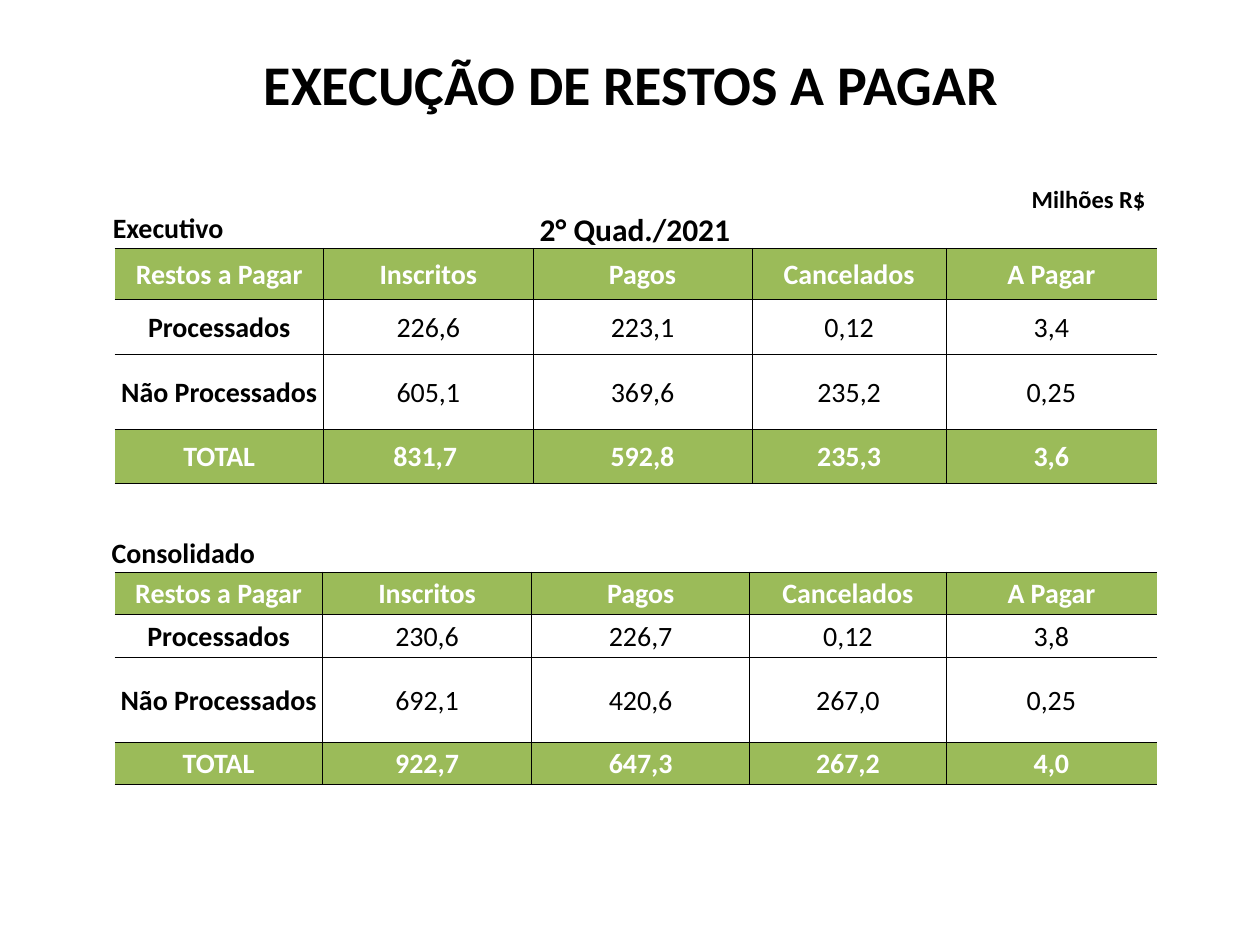
from dataclasses import dataclass

from lxml.etree import SubElement
from pptx import Presentation
from pptx.dml.color import RGBColor
from pptx.enum.text import MSO_ANCHOR, PP_ALIGN
from pptx.oxml.ns import qn
from pptx.util import Inches, Pt

COLORS = {"text": "000000", "light": "FFFFFF", "band": "9BBB59", "border": "000000"}
FONT = "Calibri"
HEADERS = ["Restos a Pagar", "Inscritos", "Pagos", "Cancelados", "A Pagar"]


@dataclass
class BalanceTable:
    top: float
    col_widths: list[float]
    row_heights: list[float]  # includes the empty rows above and below the data
    rows: list[list[str]]


@dataclass
class Label:
    text: str
    box: tuple[float, float, float, float]
    size: int
    inset: bool = True
    line_spacing: float = 1.0


TABLES = [
    BalanceTable(1.7, [1.66, 1.66, 1.74, 1.54, 1.67], [0.27, 0.41, 0.43, 0.6, 0.43, 0.23], [
        HEADERS,
        ["Processados", "226,6", "223,1", "0,12", "3,4"],
        ["Não Processados", "605,1", "369,6", "235,2", "0,25"],
        ["TOTAL", "831,7 ", "592,8", "235,3", "3,6"],
    ]),
    BalanceTable(4.2, [1.65, 1.66, 1.73, 1.56, 1.67], [0.34, 0.34, 0.34, 0.67, 0.34, 0.34], [
        HEADERS,
        ["Processados", "230,6", "226,7", "0,12", "3,8"],
        ["Não Processados", "692,1", "420,6", "267,0", "0,25"],
        ["TOTAL", "922,7", "647,3", "267,2", "4,0"],
    ]),
]

LABELS = [
    Label("Executivo", (0.35, 1.62, 1.97, 0.37), 16),
    Label("Consolidado", (0.67, 4.2, 1.57, 0.37), 16),
    Label("Milhões R$", (8.1, 1.49, 1.08, 0.21), 14, inset=False, line_spacing=0.9),
    Label("2° Quad./2021", (4.19, 1.67, 1.7, 0.27), 18, inset=False),
]


def write(tf, text: str, *, size: int = 16, bold: bool = True,
          color: str = "text", line_spacing: float = 1.0) -> None:
    p = tf.paragraphs[0]
    p.alignment = PP_ALIGN.CENTER
    p.line_spacing = line_spacing
    r = p.add_run()
    r.text = text
    r.font.name, r.font.size, r.font.bold = FONT, Pt(size), bold
    r.font.color.rgb = RGBColor.from_string(COLORS[color])


def set_borders(cell, **sides: bool) -> None:
    """Draw or clear each side, given in the order L, R, T, B."""
    tc_pr = cell._tc.get_or_add_tcPr()
    for side, shown in sides.items():
        ln = SubElement(tc_pr, qn(f"a:ln{side}"), w=str(Pt(0.5)))
        if shown:
            fill = SubElement(ln, qn("a:solidFill"))
            SubElement(fill, qn("a:srgbClr"), val=COLORS["border"])
        else:
            SubElement(ln, qn("a:noFill"))


def add_balance_table(s, data: BalanceTable) -> None:
    n_rows, n_cols = len(data.row_heights), len(data.col_widths)
    table = s.shapes.add_table(
        n_rows, n_cols, Inches(0.91), Inches(data.top),
        Inches(sum(data.col_widths)), Inches(sum(data.row_heights))).table
    table.first_row = table.horz_banding = False
    for col, width in zip(table.columns, data.col_widths):
        col.width = Inches(width)
    for row, height in zip(table.rows, data.row_heights):
        row.height = Inches(height)

    last_row, last_col = n_rows - 1, n_cols - 1
    for i in range(n_rows):
        has_data = 0 < i < last_row
        is_band = i in (1, last_row - 1)
        for j in range(n_cols):
            cell = table.cell(i, j)
            cell.margin_left = cell.margin_right = cell.margin_top = Inches(0.01)
            cell.margin_bottom = 0
            cell.vertical_anchor = MSO_ANCHOR.MIDDLE
            set_borders(cell, L=has_data and j > 0, R=has_data and j < last_col,
                        T=i > 0, B=i < last_row)
            if is_band:
                cell.fill.solid()
                cell.fill.fore_color.rgb = RGBColor.from_string(COLORS["band"])
            else:
                cell.fill.background()
            if has_data:
                write(cell.text_frame, data.rows[i - 1][j], bold=is_band or j == 0,
                      color="light" if is_band else "text")
            else:
                # A small end mark lets the empty row keep its low height
                SubElement(cell.text_frame.paragraphs[0]._p, qn("a:endParaRPr"), sz="1000")


def add_label(s, label: Label) -> None:
    tf = s.shapes.add_textbox(*map(Inches, label.box)).text_frame
    tf.word_wrap = True
    if not label.inset:
        tf.margin_left = tf.margin_right = tf.margin_top = tf.margin_bottom = 0
    write(tf, label.text, size=label.size, line_spacing=label.line_spacing)


def main() -> None:
    prs = Presentation()
    prs.slide_width, prs.slide_height = Inches(10), Inches(7.5)
    s = prs.slides.add_slide(prs.slide_layouts[5])

    title = s.shapes.title
    title.left, title.top, title.width, title.height = map(Inches, (0.77, 0.4, 8.48, 1.07))
    title.text_frame.vertical_anchor = MSO_ANCHOR.TOP
    write(title.text_frame, "EXECUÇÃO DE RESTOS A PAGAR", size=32, line_spacing=0.9)

    for data in TABLES:
        add_balance_table(s, data)
    for label in LABELS:
        add_label(s, label)
    prs.save("out.pptx")


if __name__ == "__main__":
    main()
